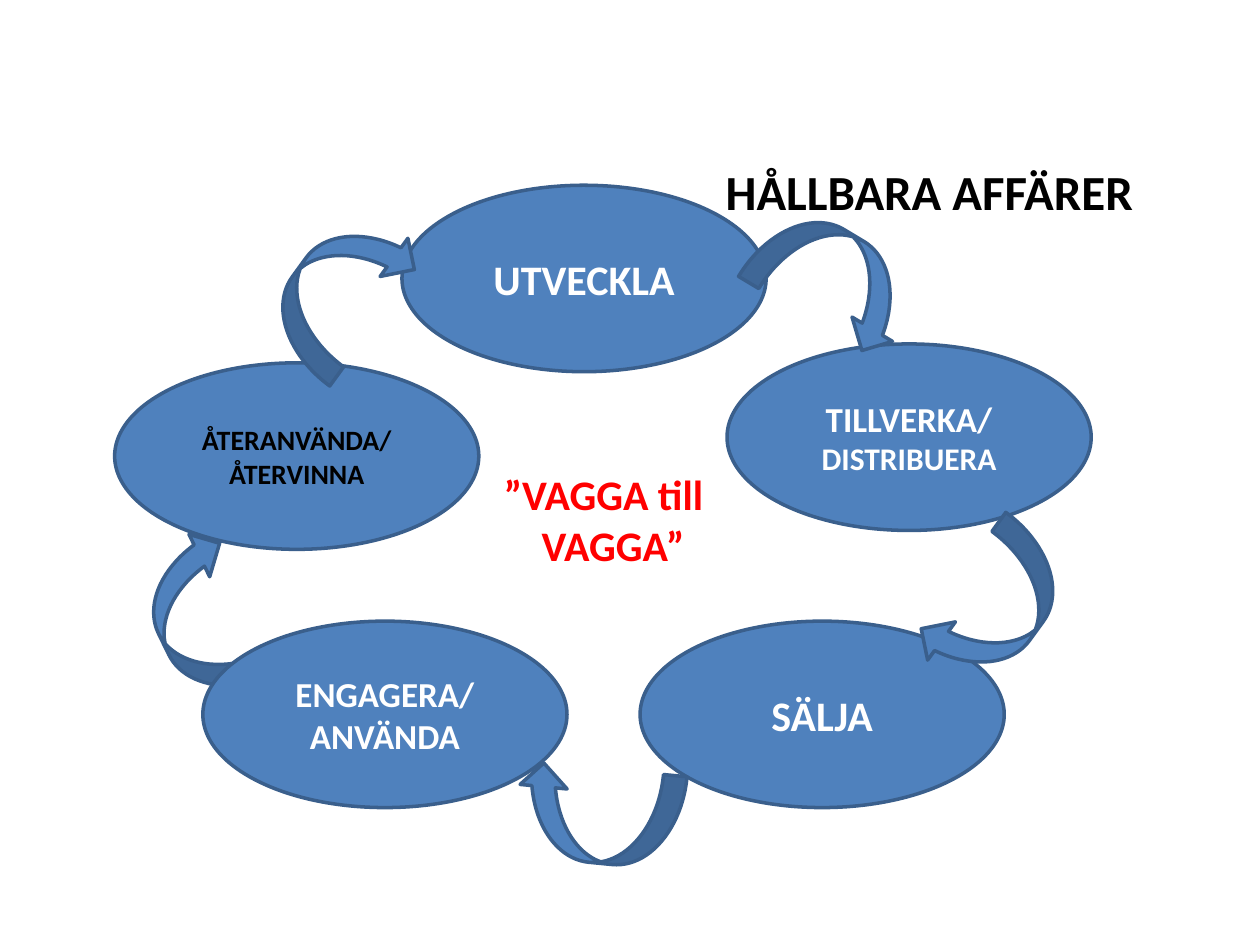
from pptx import Presentation
from pptx.dml.color import RGBColor
from pptx.enum.shapes import MSO_SHAPE
from pptx.enum.text import MSO_ANCHOR, MSO_AUTO_SIZE, PP_ALIGN
from pptx.util import Inches, Pt

BLUE = RGBColor(0x4F, 0x81, 0xBD)
EDGE = RGBColor(0x3A, 0x5F, 0x8C)
WHITE = RGBColor(255, 255, 255)
BLACK = RGBColor(0, 0, 0)
RED = RGBColor(255, 0, 0)

WIDE, HIGH = Inches(10), Inches(7.5)
COLS, ROWS = 100, 75
OVAL = (28.9, 14.8)
ARROW = (7.5, 13.3)

STEPS = [
    (31.9, 14.7, ["UTVECKLA"], [24], WHITE),
    (57.7, 27.3, ["TILLVERKA/", "DISTRIBUERA"], [20, 18], WHITE),
    (50.8, 49.3, ["SÄLJA"], [24], WHITE),
    (9.1, 28.8, ["ÅTERANVÄNDA/", "ÅTERVINNA"], [16, 16], BLACK),
]
LAST = (16.1, 49.3, ["ENGAGERA/", "ANVÄNDA"], [20, 20], WHITE)
TURNS = [(62.5, 15.5, 301), (75.2, 41.6, 36), (12.4, 42.4, 154), (23.3, 16.4, 216)]
END = (43.8, 58.1, 95.5)


def grid(x, y, w, h):
    col, row = WIDE / COLS, HIGH / ROWS
    return [round(v) for v in (x * col, y * row, w * col, h * row)]


def write(frame, lines, sizes, color, align=PP_ALIGN.LEFT,
          anchor=MSO_ANCHOR.TOP, wrap=True, fit=MSO_AUTO_SIZE.NONE):
    frame.word_wrap = wrap
    frame.auto_size = fit
    frame.vertical_anchor = anchor
    for i, (line, size) in enumerate(zip(lines, sizes)):
        para = frame.paragraphs[0] if i == 0 else frame.add_paragraph()
        para.alignment = align
        run = para.add_run()
        run.text = line
        font = run.font
        font.name, font.size, font.bold = "Calibri", Pt(size), True
        font.color.rgb = color


def solid(slide, kind, box):
    shape = slide.shapes.add_shape(kind, *grid(*box))
    shape.shadow.inherit = False
    shape.fill.solid()
    shape.fill.fore_color.rgb = BLUE
    shape.line.color.rgb = EDGE
    shape.line.width = Pt(2)
    return shape


def step(slide, x, y, lines, sizes, color):
    shape = solid(slide, MSO_SHAPE.OVAL, (x, y, *OVAL))
    write(shape.text_frame, lines, sizes, color,
          align=PP_ALIGN.CENTER, anchor=MSO_ANCHOR.MIDDLE)


def turn(slide, x, y, angle):
    shape = solid(slide, MSO_SHAPE.CURVED_LEFT_ARROW, (x, y, *ARROW))
    shape.rotation = angle


def cycle(slide):
    for item in STEPS:
        step(slide, *item)
    for item in TURNS:
        turn(slide, *item)
    step(slide, *LAST)
    turn(slide, *END)


def motto(slide, box):
    text = slide.shapes.add_textbox(*grid(*box))
    write(text.text_frame, ["”VAGGA till", "VAGGA”"], [24, 24], RED,
          wrap=False, fit=MSO_AUTO_SIZE.SHAPE_TO_FIT_TEXT)
    pad = text.text_frame.paragraphs[1]._p.get_or_add_pPr()
    pad.set("marL", str(Inches(0.3)))


def head(slide, box):
    title = slide.shapes.title
    title.left, title.top, title.width, title.height = grid(*box)
    write(title.text_frame, ["HÅLLBARA AFFÄRER"], [28], BLACK)


def main():
    deck = Presentation()
    deck.slide_width, deck.slide_height = WIDE, HIGH
    slide = deck.slides.add_slide(deck.slide_layouts[5])
    head(slide, (56.6, 12.3, 43.4, 5.7))
    cycle(slide)
    motto(slide, (39, 36.7, 18, 9.1))
    deck.save("out.pptx")


if __name__ == "__main__":
    main()
